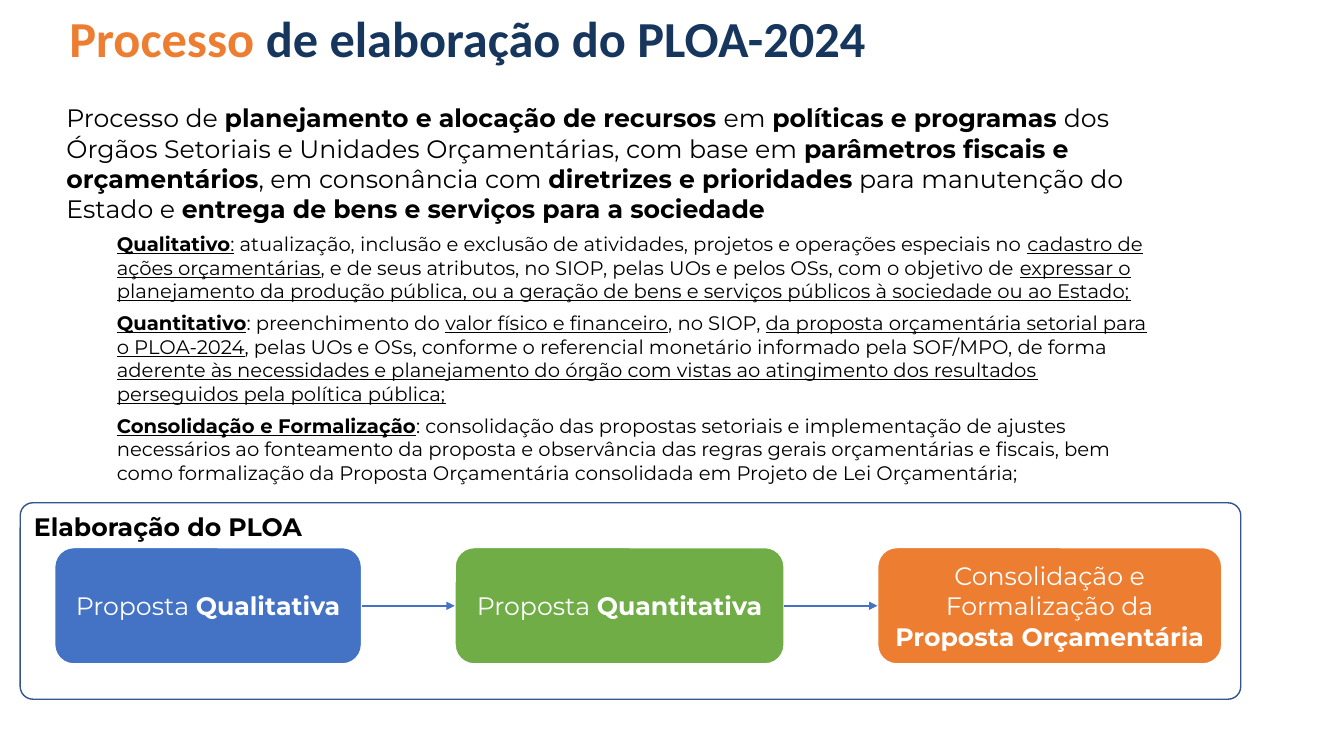
from dataclasses import dataclass

from pptx import Presentation
from pptx.dml.color import RGBColor
from pptx.enum.shapes import MSO_CONNECTOR as Connector, MSO_SHAPE as Shape
from pptx.enum.text import MSO_ANCHOR as Anchor, MSO_AUTO_SIZE as AutoSize, PP_ALIGN as Align
from pptx.oxml.ns import qn
from pptx.util import Cm, Pt
from lxml.etree import SubElement


@dataclass(frozen=True)
class Theme:
    navy: str = "17365D"
    orange: str = "ED7D31"
    blue: str = "4472C4"
    green: str = "70AD47"
    frame: str = "325491"
    black: str = "000000"
    white: str = "FFFFFF"
    heading_font: str = "Calibri"
    body_font: str = "Montserrat"
    title_size: int = 36
    lead_size: int = 18
    detail_size: int = 14


theme = Theme()


def write(para, text, size=theme.lead_size, color=theme.black, font=theme.body_font,
          bold=False, underline=False):
    span = para.add_run()
    span.text = text
    span.font.name = font
    span.font.size = Pt(size)
    span.font.bold = bold
    span.font.underline = underline
    span.font.color.rgb = RGBColor.from_string(color)


def add_round_box(left, top, width, height, line, line_width, fill=None):
    box = page.shapes.add_shape(Shape.ROUNDED_RECTANGLE, Cm(left), Cm(top), Cm(width), Cm(height))
    box.shadow.inherit = False
    if fill:
        box.fill.solid()
        box.fill.fore_color.rgb = RGBColor.from_string(fill)
    else:
        box.fill.background()
    box.line.color.rgb = RGBColor.from_string(line)
    box.line.width = Pt(line_width)
    box.text_frame.word_wrap = True
    return box


deck = Presentation()
deck.slide_width, deck.slide_height = Cm(33.87), Cm(19.05)
page = deck.slides.add_slide(deck.slide_layouts[1])
title, body = page.placeholders

# Title
title.left, title.top, title.width, title.height = Cm(1.55), Cm(0.08), Cm(30.76), Cm(2.24)
frame = title.text_frame
frame.auto_size = AutoSize.NONE
frame.vertical_anchor = Anchor.TOP
frame.margin_left = frame.margin_right = Cm(0.2)
frame.margin_top = frame.margin_bottom = Cm(0.1)
para = frame.paragraphs[0]
para.alignment = Align.LEFT
for text, color in [("Processo", theme.orange), (" de elaboração do PLOA-2024", theme.navy)]:
    write(para, text, size=theme.title_size, color=color, font=theme.heading_font, bold=True)

# Lead paragraph and stages: b marks bold, u marks underline
paragraphs = [
    [("Processo de ", ""), ("planejamento e alocação de recursos ", "b"), ("em ", ""),
     ("políticas e programas ", "b"),
     ("dos Órgãos Setoriais e Unidades Orçamentárias, com base em ", ""),
     ("parâmetros fiscais e orçamentários", "b"), (", em consonância com ", ""),
     ("diretrizes e prioridades", "b"), (" para manutenção do Estado e ", ""),
     ("entrega de bens e serviços para a sociedade", "b")],
    [("Qualitativo", "bu"), (":", "u"),
     (" atualização, inclusão e exclusão de atividades, projetos e operações especiais no ", ""),
     ("cadastro de ações orçamentárias", "u"),
     (", e de seus atributos, no SIOP, pelas UOs e pelos OSs, com o objetivo de ", ""),
     ("expressar o planejamento da produção pública, ou a geração de bens e serviços "
      "públicos à sociedade ou ao Estado;", "u")],
    [("Quantitativo", "bu"), (": preenchimento do ", ""), ("valor físico e financeiro", "u"),
     (", no SIOP, ", ""), ("da proposta orçamentária setorial para o PLOA-2024", "u"),
     (", pelas UOs e OSs, conforme o referencial monetário informado pela SOF/MPO, de forma ", ""),
     ("aderente às necessidades e planejamento do órgão com vistas ao atingimento dos "
      "resultados perseguidos pela política pública;", "u")],
    [("Consolidação e Formalização", "bu"),
     (": consolidação das propostas setoriais e implementação de ajustes necessários ao "
      "fonteamento da proposta e observância das regras gerais orçamentárias e fiscais, bem "
      "como formalização da Proposta Orçamentária consolidada em Projeto de Lei "
      "Orçamentária;", "")],
]
body.left, body.top, body.width, body.height = Cm(1.42), Cm(2.46), Cm(27.94), Cm(9.96)
frame = body.text_frame
frame.auto_size = AutoSize.SHAPE_TO_FIT_TEXT
for index, spans in enumerate(paragraphs):
    is_stage = index > 0
    para = frame.add_paragraph() if is_stage else frame.paragraphs[0]
    para.level = int(is_stage)
    props = para._p.get_or_add_pPr()
    props.set("marL", str(Cm(1.27) if is_stage else 0))
    props.set("indent", "0")
    SubElement(props, qn("a:buNone"))
    para.space_before, para.space_after = Pt(0), Pt(6)
    for text, marks in spans:
        write(para, text, size=theme.detail_size if is_stage else theme.lead_size,
              bold="b" in marks, underline="u" in marks)

# Process flow
steps = [
    ("Proposta ", "Qualitativa", 7.75, theme.blue),
    ("Proposta ", "Quantitativa", 8.31, theme.green),
    ("Consolidação e Formalização da ", "Proposta Orçamentária", 8.69, theme.orange),
]
left, gap = 1.37, 2.34
previous = None
for plain, strong, width, fill in steps:
    box = add_round_box(left, 13.79, width, 2.95, theme.white, 1.5, fill)
    box.text_frame.vertical_anchor = Anchor.MIDDLE
    para = box.text_frame.paragraphs[0]
    para.alignment = Align.CENTER
    write(para, plain, color=theme.white)
    write(para, strong, color=theme.white, bold=True)
    if previous:
        arrow = page.shapes.add_connector(Connector.STRAIGHT, 0, 0, 0, 0)
        arrow.begin_connect(previous, 3)
        arrow.end_connect(box, 1)
        arrow.line.color.rgb = RGBColor.from_string(theme.blue)
        arrow.line.width = Pt(1.5)
        SubElement(arrow.line._get_or_add_ln(), qn("a:tailEnd"), type="triangle")
        SubElement(arrow._element.spPr, qn("a:effectLst"))
    previous = box
    left += width + gap

# Frame around the flow
outline = add_round_box(0.51, 12.67, 30.76, 4.95, theme.frame, 1)
outline.adjustments[0] = 0.065
outline.text_frame.vertical_anchor = Anchor.TOP
para = outline.text_frame.paragraphs[0]
para.alignment = Align.LEFT
write(para, "Elaboração do PLOA", bold=True)

deck.save("out.pptx")
